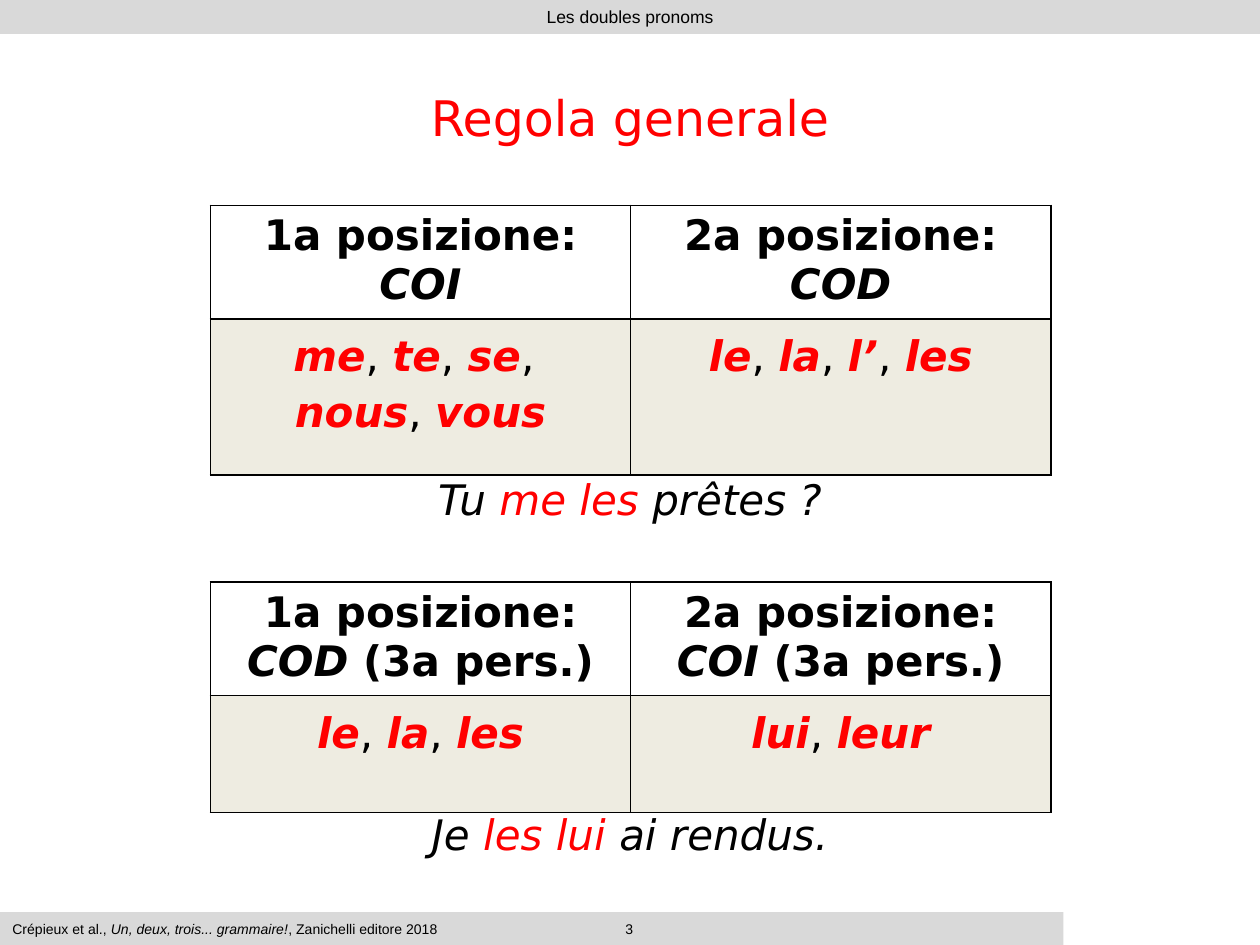
from lxml import etree
from pptx import Presentation
from pptx.dml.color import RGBColor
from pptx.enum.shapes import MSO_SHAPE
from pptx.enum.text import MSO_ANCHOR, PP_ALIGN
from pptx.oxml.ns import qn
from pptx.util import Pt

RECT = MSO_SHAPE.RECTANGLE
MID, TOP = MSO_ANCHOR.MIDDLE, MSO_ANCHOR.TOP
LEFT, MIDDLE = PP_ALIGN.LEFT, PP_ALIGN.CENTER
PX = 9144
HUES = {"black": "000000", "red": "FF0000", "grey": "D9D9D9", "sand": "EEECE1"}
MAIN, SMALL = "DejaVu Sans", "Arial"


class Deck:
    """Style and current slide, with a method for each kind of element."""

    def __init__(self, wide, high):
        self.show = Presentation()
        self.show.slide_width, self.show.slide_height = wide * PX, high * PX
        self.slide = self.show.slides.add_slide(self.show.slide_layouts[6])

    def hue(self, name):
        return RGBColor.from_string(HUES[name])

    def put(self, frame, runs, size, font, align=MIDDLE, space=None):
        para = frame.paragraphs[0]
        para.alignment = align
        if space:
            para.line_spacing = space
        for text, marks in runs:
            for num, part in enumerate(text.split("\n")):
                if num:
                    para.add_line_break()
                if part:
                    run = para.add_run()
                    run.text = part
                    run.font.size, run.font.name = Pt(size), font
                    run.font.bold, run.font.italic = "b" in marks, "i" in marks
                    run.font.color.rgb = self.hue("red" if "r" in marks else "black")

    def bar(self, box, runs, size, align=MIDDLE):
        shape = self.slide.shapes.add_shape(RECT, *[n * PX for n in box])
        shape.shadow.inherit = False
        shape.fill.solid()
        shape.fill.fore_color.rgb = self.hue("grey")
        shape.line.fill.background()
        frame = shape.text_frame
        frame.vertical_anchor = MID
        frame.margin_top = frame.margin_bottom = 0
        self.put(frame, runs, size, SMALL, align)

    def text(self, box, runs, size):
        frame = self.slide.shapes.add_textbox(*[n * PX for n in box]).text_frame
        frame.word_wrap = True
        frame.vertical_anchor = MID
        frame.margin_top = frame.margin_bottom = 0
        self.put(frame, runs, size, MAIN)

    def edge(self, cell):
        props = cell._tc.get_or_add_tcPr()
        for side in ("a:lnL", "a:lnR", "a:lnT", "a:lnB"):
            line = etree.SubElement(props, qn(side), w=str(Pt(1)))
            fill = etree.SubElement(line, qn("a:solidFill"))
            etree.SubElement(fill, qn("a:srgbClr"), val=HUES["black"])

    def table(self, left, top, width, highs, rows):
        box = [n * PX for n in (left, top, width, sum(highs))]
        grid = self.slide.shapes.add_table(len(rows), len(rows[0]), *box).table
        grid.first_row = grid.horz_banding = False
        for y, row in enumerate(rows):
            grid.rows[y].height = highs[y] * PX
            for x, runs in enumerate(row):
                cell = grid.cell(y, x)
                cell.vertical_anchor = TOP
                self.edge(cell)
                if y:
                    cell.fill.solid()
                    cell.fill.fore_color.rgb = self.hue("sand")
                else:
                    cell.fill.background()
                self.put(cell.text_frame, runs, 24, MAIN, space=1.15 if y else None)


def head(place, name, note=""):
    return [(f"{place} posizione:\n", "b"), (name, "bi"), (note, "b")]


def words(*items):
    runs = []
    for item in items:
        runs += [(", ", ""), (item, "bir")]
    return runs[1:]


def main():
    deck = Deck(1000, 750)
    deck.bar((0, 0, 1000, 27), [("Les doubles pronoms", "")], 10)
    deck.text((50, 30, 900, 125), [("Regola generale", "r")], 28)

    deck.table(167, 163, 667, (87, 124), [
        [head("1a", "COI"), head("2a", "COD")],
        [words("me", "te", "se", "\nnous", "vous"), words("le", "la", "l’", "les")],
    ])
    deck.text((50, 376, 900, 39),
              [("Tu ", "i"), ("me les ", "ir"), ("prêtes ?", "i")], 24)

    note = " (3a pers.)"
    deck.table(167, 462, 667, (87, 93), [
        [head("1a", "COD", note), head("2a", "COI", note)],
        [words("le", "la", "les"), words("lui", "leur")],
    ])
    deck.text((50, 642, 900, 39),
              [("Je ", "i"), ("les lui ", "ir"), ("ai rendus.", "i")], 24)

    deck.bar((0, 724, 844, 26), [
        ("Crépieux et al., ", ""),
        ("Un, deux, trois... grammaire!", "i"),
        (", Zanichelli editore 2018", ""),
    ], 8, LEFT)
    deck.bar((386, 724, 227, 26), [("3", "")], 8)
    deck.show.save("out.pptx")


if __name__ == "__main__":
    main()
